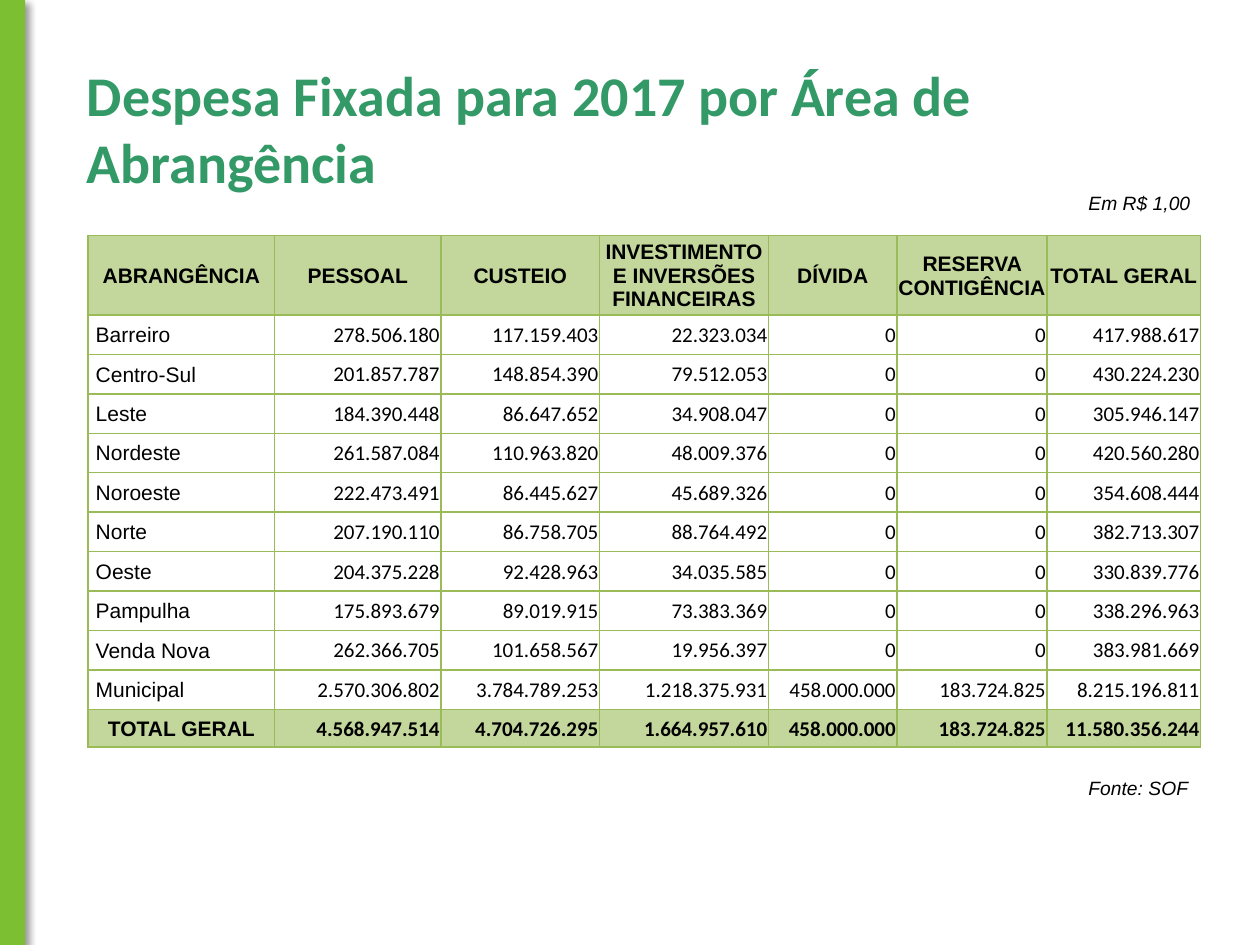
from lxml import etree
from pptx import Presentation
from pptx import util as u
from pptx.dml.color import RGBColor
from pptx.enum import shapes, text
from pptx.oxml import ns

GREEN = RGBColor(0x7C, 0xBF, 0x33)
TEAL = RGBColor(0x33, 0x99, 0x66)
PALE = RGBColor(0xC3, 0xD6, 0x9B)
BORDER = RGBColor(0x9B, 0xBB, 0x59)
BLACK = RGBColor(0, 0, 0)

COLUMNS = [1.48, 1.32, 1.26, 1.34, 1.02, 1.19, 1.22]
HEADER_H, TOTAL_H = 0.63, 0.3
ROWS = [
    ["ABRANGÊNCIA", "PESSOAL", "CUSTEIO", "INVESTIMENTO E INVERSÕES FINANCEIRAS",
     "DÍVIDA", "RESERVA CONTIGÊNCIA", "TOTAL GERAL"],
    ["Barreiro", "278.506.180", "117.159.403", "22.323.034", "0", "0", "417.988.617"],
    ["Centro-Sul", "201.857.787", "148.854.390", "79.512.053", "0", "0", "430.224.230"],
    ["Leste", "184.390.448", "86.647.652", "34.908.047", "0", "0", "305.946.147"],
    ["Nordeste", "261.587.084", "110.963.820", "48.009.376", "0", "0", "420.560.280"],
    ["Noroeste", "222.473.491", "86.445.627", "45.689.326", "0", "0", "354.608.444"],
    ["Norte", "207.190.110", "86.758.705", "88.764.492", "0", "0", "382.713.307"],
    ["Oeste", "204.375.228", "92.428.963", "34.035.585", "0", "0", "330.839.776"],
    ["Pampulha", "175.893.679", "89.019.915", "73.383.369", "0", "0", "338.296.963"],
    ["Venda Nova", "262.366.705", "101.658.567", "19.956.397", "0", "0", "383.981.669"],
    ["Municipal", "2.570.306.802", "3.784.789.253", "1.218.375.931",
     "458.000.000", "183.724.825", "8.215.196.811"],
    ["TOTAL GERAL", "4.568.947.514", "4.704.726.295", "1.664.957.610",
     "458.000.000", "183.724.825", "11.580.356.244"],
]


def inches(box):
    return [u.Inches(v) for v in box]


def write(p, words, color=BLACK, **formats):
    r = p.add_run()
    r.text = words
    r.font.color.rgb = color
    for name, value in formats.items():
        setattr(r.font, name, value)


def add_text(s, box, words, wrap, **formats):
    tf = s.shapes.add_textbox(*inches(box)).text_frame
    tf.word_wrap = wrap
    tf.auto_size = text.MSO_AUTO_SIZE.SHAPE_TO_FIT_TEXT
    write(tf.paragraphs[0], words, **formats)


def add_side_bar(s, box):
    sp = s.shapes.add_shape(shapes.MSO_SHAPE.RECTANGLE, *inches(box))
    sp.shadow.inherit = False
    sp.fill.solid()
    sp.fill.fore_color.rgb = GREEN
    sp.line.fill.background()
    effects = sp._element.spPr.find(ns.qn("a:effectLst"))
    shadow = etree.SubElement(effects, ns.qn("a:outerShdw"), blurRad=str(u.Pt(4)),
                              dist=str(u.Pt(3)), dir=str(45 * 60000), rotWithShape="0")
    color = etree.SubElement(shadow, ns.qn("a:srgbClr"), val=str(BLACK))
    etree.SubElement(color, ns.qn("a:alpha"), val="40000")


def add_borders(cell):
    tcPr = cell._tc.get_or_add_tcPr()
    for i, side in enumerate(("lnL", "lnR", "lnT", "lnB")):
        ln = etree.Element(ns.qn("a:" + side), w=str(u.Pt(1)))
        fill = etree.SubElement(ln, ns.qn("a:solidFill"))
        etree.SubElement(fill, ns.qn("a:srgbClr"), val=str(BORDER))
        tcPr.insert(i, ln)


def fill_cell(cell, words, header, total, label):
    side = 0 if header else 0.01
    margins = {"margin_left": 0.06 if label and not (header or total) else side,
               "margin_right": side, "margin_top": 0.01, "margin_bottom": 0}
    for name, value in margins.items():
        setattr(cell, name, u.Inches(value))
    cell.vertical_anchor = text.MSO_ANCHOR.MIDDLE
    if header or total:
        cell.fill.solid()
        cell.fill.fore_color.rgb = PALE
    else:
        cell.fill.background()
    add_borders(cell)
    p = cell.text_frame.paragraphs[0]
    if header or (total and label):
        p.alignment = text.PP_ALIGN.CENTER
    else:
        p.alignment = text.PP_ALIGN.LEFT if label else text.PP_ALIGN.RIGHT
    write(p, words, size=u.Pt(12), bold=header or total,
          name="Arial" if header or label else "Calibri")


def add_expense_table(s, box):
    table = s.shapes.add_table(len(ROWS), len(COLUMNS), *inches(box)).table
    table.first_row = table.horz_banding = False
    for column, width in zip(table.columns, COLUMNS):
        column.width = u.Inches(width)
    areas = len(ROWS) - 2
    row_h = (box[3] - HEADER_H - TOTAL_H) / areas
    heights = [HEADER_H] + [row_h] * areas + [TOTAL_H]
    for i, (row, height) in enumerate(zip(table.rows, heights)):
        row.height = u.Inches(height)
        for j, words in enumerate(ROWS[i]):
            fill_cell(table.cell(i, j), words, i == 0, i == len(ROWS) - 1, j == 0)


def main():
    prs = Presentation()
    prs.slide_width, prs.slide_height = u.Inches(10), u.Inches(7.5)
    s = prs.slides.add_slide(prs.slide_layouts[6])
    add_side_bar(s, (0, 0, 0.2, 7.5))
    add_text(s, (0.59, 0.43, 8.82, 1.18), "Despesa Fixada para 2017 por Área de Abrangência",
             True, color=TEAL, name="Calibri", size=u.Pt(32), bold=True)
    note = {"name": "Arial", "size": u.Pt(11), "italic": True}
    add_text(s, (8.54, 1.47, 1.02, 0.29), "Em R$ 1,00", False, **note)
    add_text(s, (8.54, 6.11, 1, 0.29), "Fonte: SOF", False, **note)
    add_expense_table(s, (0.7, 1.87, sum(COLUMNS), 4.06))
    prs.save("out.pptx")


if __name__ == "__main__":
    main()
